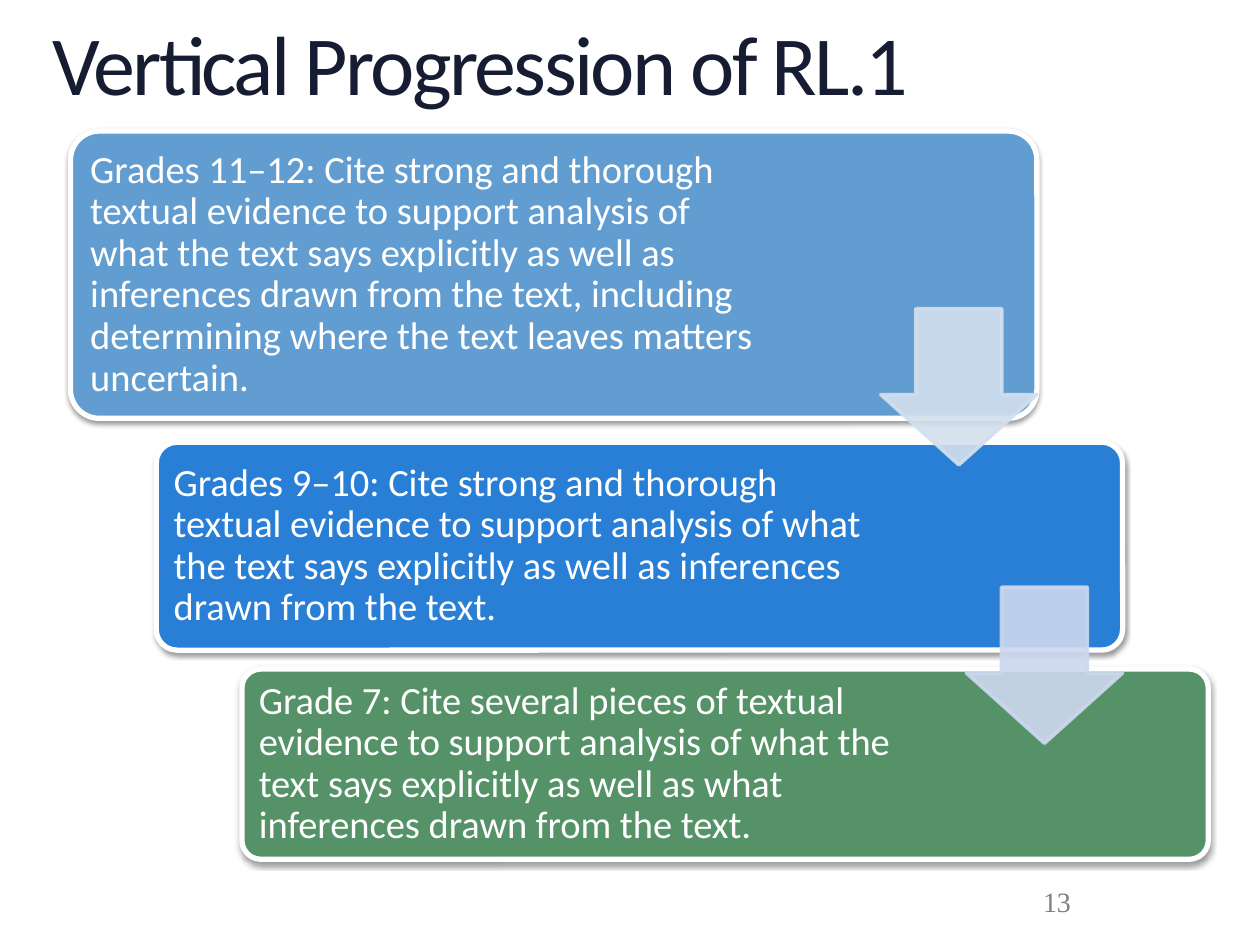
from dataclasses import dataclass

from lxml import etree
from pptx import Presentation
from pptx.dml.color import RGBColor
from pptx.enum.shapes import MSO_SHAPE
from pptx.enum.text import MSO_ANCHOR, MSO_AUTO_SIZE, PP_ALIGN
from pptx.oxml.ns import qn
from pptx.util import Inches, Pt

ROUNDED = MSO_SHAPE.ROUNDED_RECTANGLE
DOWN_ARROW = MSO_SHAPE.DOWN_ARROW
MIDDLE = MSO_ANCHOR.MIDDLE
LEFT = PP_ALIGN.LEFT
FIT_SHAPE = MSO_AUTO_SIZE.SHAPE_TO_FIT_TEXT
TITLE_ONLY = 5

COLORS = {
    "title": "161D32",
    "number": "808080",
    "white": "FFFFFF",
    "shadow": "000000",
    "grades_11_12": "629DD1",
    "grades_9_10": "297FD5",
    "grade_7": "569268",
    "first_arrow": "D3DFEE",
    "second_arrow": "CDD8EF",
}
TITLE_FONT = {"name": "Calibri", "size": Pt(48)}
CARD_FONT = {"name": "Calibri", "size": Pt(22)}
NUMBER_FONT = {"name": "Times New Roman", "size": Pt(16)}

CARD_LEFT, CARD_STEP, CARD_WIDTH = 0.56, 0.68, 7.67
ARROW_SIZE = 1.24
CARD_MARGINS = {
    "margin_left": Inches(0.09),
    "margin_top": Inches(0.09),
    "margin_right": Inches(2),
    "margin_bottom": Inches(0.09),
}
NO_MARGINS = dict.fromkeys(CARD_MARGINS, 0)


@dataclass(frozen=True)
class GradeCard:
    top: float
    height: float
    color: str
    standard: str


@dataclass(frozen=True)
class StepArrow:
    top: float
    color: str


CARDS = [
    GradeCard(1.04, 2.28, "grades_11_12",
              "Grades 11–12: Cite strong and thorough textual evidence to support "
              "analysis of what the text says explicitly as well as inferences drawn "
              "from the text, including determining where the text leaves matters "
              "uncertain."),
    GradeCard(3.51, 1.65, "grades_9_10",
              "Grades 9–10: Cite strong and thorough textual evidence to support "
              "analysis of what the text says explicitly as well as inferences drawn "
              "from the text."),
    GradeCard(5.31, 1.51, "grade_7",
              "Grade 7: Cite several pieces of textual evidence to support analysis "
              "of what the text says explicitly as well as what inferences drawn "
              "from the text."),
]
ARROWS = [StepArrow(2.45, "first_arrow"), StepArrow(4.66, "second_arrow")]


def rgb(color: str) -> RGBColor:
    return RGBColor.from_string(COLORS[color])


def apply(target, values: dict) -> None:
    for attribute, value in values.items():
        setattr(target, attribute, value)


def write(frame, text: str, font: dict, color: str, line_spacing: float = 1.0) -> None:
    frame.text = text
    paragraph = frame.paragraphs[0]
    apply(paragraph, {"alignment": LEFT, "line_spacing": line_spacing})
    run_font = paragraph.runs[0].font
    apply(run_font, font)
    run_font.color.rgb = rgb(color)


def paint(shape, fill: str, line: str, line_width: float) -> None:
    shape.shadow.inherit = False
    shape.fill.solid()
    shape.fill.fore_color.rgb = rgb(fill)
    shape.line.color.rgb = rgb(line)
    shape.line.width = Pt(line_width)


def set_alpha(color_element, percent: int) -> None:
    etree.SubElement(color_element, qn("a:alpha"), val=str(percent * 1000))


def add_drop_shadow(shape) -> None:
    effects = shape._element.spPr.find(qn("a:effectLst"))
    shadow = etree.SubElement(
        effects, qn("a:outerShdw"), blurRad=str(Pt(3.1)), dist=str(Pt(1.6)),
        dir=str(90 * 60000), rotWithShape="0")
    color = etree.SubElement(shadow, qn("a:srgbClr"), val=COLORS["shadow"])
    set_alpha(color, 38)


def add_title(slide, text: str) -> None:
    title = slide.shapes.title
    apply(title, {"left": Inches(0.42), "top": Inches(0.18),
                  "width": Inches(9.17), "height": Inches(0.73)})
    frame = title.text_frame
    apply(frame, NO_MARGINS | {"word_wrap": True, "auto_size": FIT_SHAPE,
                               "vertical_anchor": MSO_ANCHOR.TOP})
    write(frame, text, TITLE_FONT, "title", 0.9)
    frame.paragraphs[0].runs[0].font._element.set("spc", "-150")


def add_card(slide, card: GradeCard, left: float) -> None:
    shape = slide.shapes.add_shape(
        ROUNDED, Inches(left), Inches(card.top),
        Inches(CARD_WIDTH), Inches(card.height))
    shape.adjustments[0] = 0.1
    paint(shape, card.color, "white", 3)
    add_drop_shadow(shape)
    frame = shape.text_frame
    apply(frame, CARD_MARGINS | {"word_wrap": True, "vertical_anchor": MIDDLE})
    write(frame, card.standard, CARD_FONT, "white", 0.9)


def add_arrow(slide, arrow: StepArrow, right: float) -> None:
    shape = slide.shapes.add_shape(
        DOWN_ARROW, Inches(right - ARROW_SIZE), Inches(arrow.top),
        Inches(ARROW_SIZE), Inches(ARROW_SIZE))
    # The head length comes first, then the shaft width.
    shape.adjustments[0], shape.adjustments[1] = 0.55, 0.45
    paint(shape, arrow.color, arrow.color, 2)
    for color in shape._element.spPr.iter(qn("a:srgbClr")):
        set_alpha(color, 90)


def add_slide_number(slide, number: str) -> None:
    box = slide.shapes.add_textbox(Inches(8.18), Inches(6.95), Inches(1.4), Inches(0.4))
    apply(box.text_frame, {"word_wrap": True, "vertical_anchor": MIDDLE})
    write(box.text_frame, number, NUMBER_FONT, "number")


def main() -> None:
    deck = Presentation()
    deck.slide_width, deck.slide_height = Inches(10), Inches(7.5)
    slide = deck.slides.add_slide(deck.slide_layouts[TITLE_ONLY])
    add_title(slide, "Vertical Progression of RL.1")
    add_slide_number(slide, "13")
    for step, card in enumerate(CARDS):
        add_card(slide, card, CARD_LEFT + step * CARD_STEP)
    for step, arrow in enumerate(ARROWS):
        add_arrow(slide, arrow, CARD_LEFT + step * CARD_STEP + CARD_WIDTH)
    deck.save("out.pptx")


if __name__ == "__main__":
    main()
